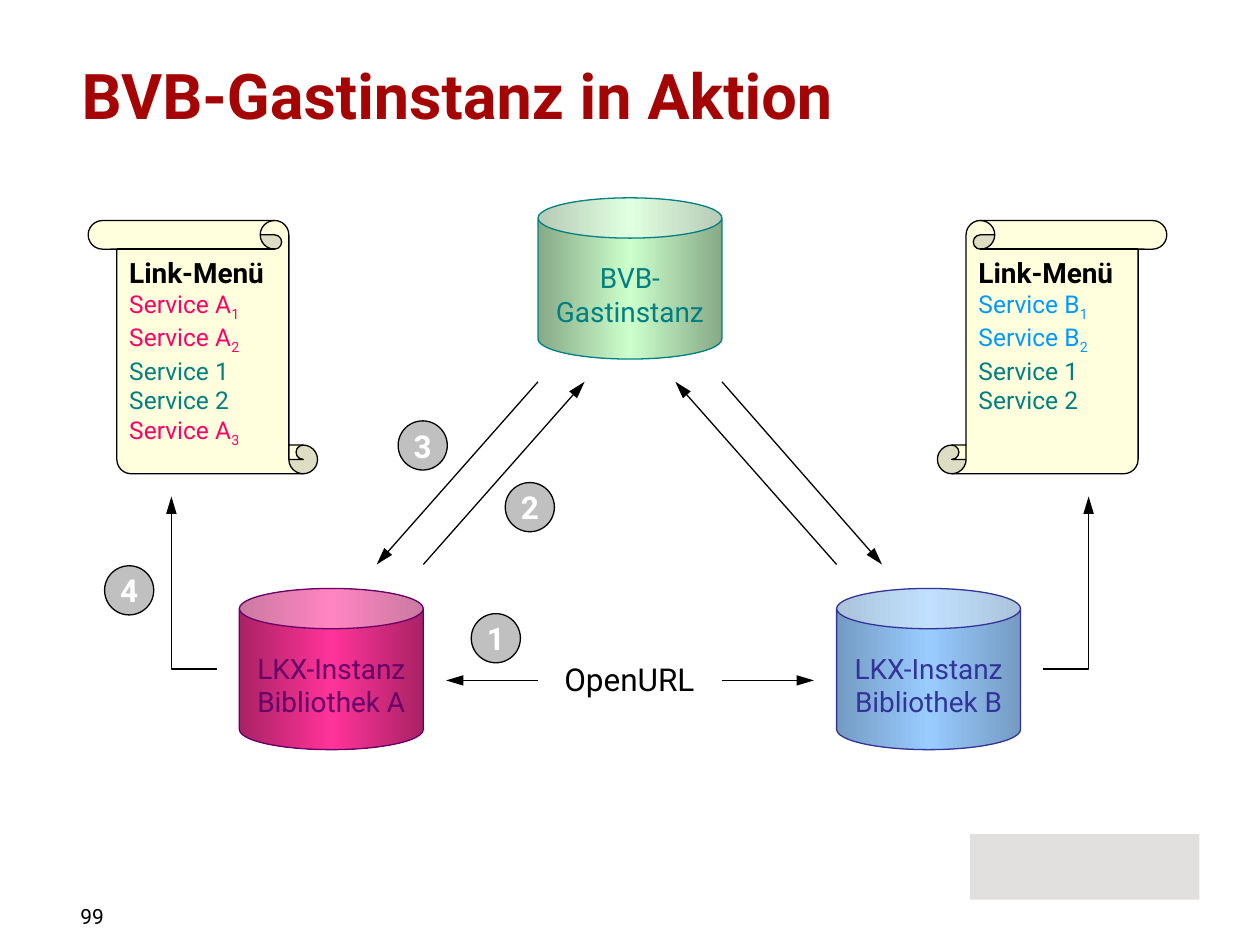
import copy

import pptx
import pptx.dml.color
import pptx.enum.shapes
import pptx.enum.text
import pptx.oxml.ns
import pptx.util
from pptx.util import Inches

SHAPE = pptx.enum.shapes.MSO_SHAPE
CONNECTOR = pptx.enum.shapes.MSO_CONNECTOR
ANCHOR = pptx.enum.text.MSO_ANCHOR
ALIGN = pptx.enum.text.PP_ALIGN
qn = pptx.oxml.ns.qn

FONT = "Roboto"
COLORS = {
    "title": "A40404", "black": "000000", "white": "FFFFFF",
    "block": "E1E0DE", "badge": "C0C0C0", "scroll": "FFFFCC",
    "shared": "008080", "guest_edge": "87A987", "guest_mid": "CCFFCC",
    "a_text": "660066", "a_edge": "A92265", "a_mid": "FF3399", "a_service": "FF0066",
    "b_text": "333399", "b_edge": "749BC2", "b_mid": "99CCFF", "b_service": "0099FF",
}


def rgb(name):
    return pptx.dml.color.RGBColor.from_string(COLORS[name])


def add_run(p, text, size=14, color="black", bold=False, baseline=0):
    r = p.add_run()
    r.text = text
    r.font.name = FONT
    r.font.size = pptx.util.Pt(size)
    r.font.bold = bold
    r.font.color.rgb = rgb(color)
    if baseline:
        r.font._element.set("baseline", str(baseline * 1000))


def add_text(slide, x, y, w, h, text, align=None, **fmt):
    sp = slide.shapes.add_textbox(Inches(x), Inches(y), Inches(w), Inches(h))
    tf = sp.text_frame
    tf.word_wrap = True
    p = tf.paragraphs[0]
    p.alignment = align
    add_run(p, text, **fmt)


def add_shape(slide, kind, x, y, w, h, fill, line=None):
    sp = slide.shapes.add_shape(kind, Inches(x), Inches(y), Inches(w), Inches(h))
    sp.shadow.inherit = False
    sp.fill.solid()
    sp.fill.fore_color.rgb = rgb(fill)
    if line:
        sp.line.color.rgb = rgb(line)
        sp.line.width = pptx.util.Pt(0.75)
    else:
        sp.line.fill.background()
    return sp


def add_cylinder(slide, x, y, text, edge, mid, color):
    sp = add_shape(slide, SHAPE.CAN, x, y, 1.46, 1.28, mid, color)
    sp.fill.gradient()
    sp.fill.gradient_angle = 0
    stops = sp._element.spPr.find(".//" + qn("a:gsLst"))
    stops.insert(1, copy.deepcopy(stops[0]))
    for stop, position, name in zip(sp.fill.gradient_stops, (0, 0.5, 1), (edge, mid, edge)):
        stop.position = position
        stop.color.rgb = rgb(name)
    tf = sp.text_frame
    tf.word_wrap = True
    tf.vertical_anchor = ANCHOR.TOP
    tf.margin_top = Inches(0.18)
    p = tf.paragraphs[0]
    p.alignment = ALIGN.CENTER
    add_run(p, text, size=16, color=color)


def add_scroll(slide, x, services, flip=False):
    sp = add_shape(slide, SHAPE.VERTICAL_SCROLL, x, 1.75, 1.82, 2.01, "scroll", "black")
    if flip:
        sp._element.spPr.xfrm.set("flipH", "1")
    fill_color = sp._element.spPr.find(qn("a:solidFill"))[0]
    fill_color.append(fill_color.makeelement(qn("a:alpha"), {"val": "65000"}))
    tf = sp.text_frame
    tf.word_wrap = True
    tf.vertical_anchor = ANCHOR.TOP
    p = tf.paragraphs[0]
    p.alignment = ALIGN.LEFT
    add_run(p, "Link-Menü", size=16, bold=True)
    for name, index, color in services:
        p = tf.add_paragraph()
        p.alignment = ALIGN.LEFT
        add_run(p, name, color=color)
        if index:
            add_run(p, index, color=color, baseline=-25)


def add_badge(slide, x, y, number):
    sp = add_shape(slide, SHAPE.OVAL, x, y, 0.39, 0.39, "badge", "black")
    tf = sp.text_frame
    tf.word_wrap = False
    tf.vertical_anchor = ANCHOR.MIDDLE
    p = tf.paragraphs[0]
    p.alignment = ALIGN.CENTER
    add_run(p, number, size=18, color="white", bold=True)


def add_arrow(slide, x1, y1, x2, y2, kind=CONNECTOR.STRAIGHT):
    cxn = slide.shapes.add_connector(kind, Inches(x1), Inches(y1), Inches(x2), Inches(y2))
    cxn.line.color.rgb = rgb("black")
    cxn.line.width = pptx.util.Pt(0.75)
    sp_pr = cxn._element.spPr
    ln = sp_pr.find(qn("a:ln"))
    ln.append(ln.makeelement(qn("a:tailEnd"), {"type": "triangle", "w": "med", "len": "lg"}))
    sp_pr.append(sp_pr.makeelement(qn("a:effectLst"), {}))
    return cxn


def add_elbow_up(slide, x_foot, x_tip):
    cxn = add_arrow(slide, x_tip, 3.94, x_foot, 5.31, CONNECTOR.ELBOW)
    sp_pr = cxn._element.spPr
    sp_pr.find(qn("a:xfrm")).set("rot", "10800000")
    sp_pr.find(qn("a:prstGeom")).set("prst", "bentConnector2")


def main():
    prs = pptx.Presentation()
    prs.slide_width, prs.slide_height = Inches(10), Inches(7.5)
    s = prs.slides.add_slide(prs.slide_layouts[6])

    add_shape(s, SHAPE.RECTANGLE, 7.7, 6.62, 1.82, 0.52, "block")
    add_text(s, 0.54, 7.12, 2.05, 0.38, "99", size=12)
    add_text(s, 0.55, 0.4, 8.89, 0.74, "BVB-Gastinstanz in Aktion",
             size=36, color="title", bold=True)

    add_cylinder(s, 4.27, 1.57, "BVB-Gastinstanz", "guest_edge", "guest_mid", "shared")
    add_cylinder(s, 1.9, 4.67, "LKX-Instanz Bibliothek A", "a_edge", "a_mid", "a_text")
    add_cylinder(s, 6.64, 4.67, "LKX-Instanz Bibliothek B", "b_edge", "b_mid", "b_text")

    shared = [("Service 1", "", "shared"), ("Service 2", "", "shared")]
    a1, a2, a3 = [("Service A", i, "a_service") for i in "123"]
    b1, b2 = [("Service B", i, "b_service") for i in "12"]
    add_scroll(s, 7.44, [b1, b2, *shared])
    add_scroll(s, 0.7, [a1, a2, *shared, a3], flip=True)

    for ends in [
        (5.73, 5.4, 6.46, 5.4), (4.27, 5.4, 3.54, 5.4),
        (5.73, 3.03, 7, 4.48), (6.64, 4.48, 5.36, 3.03),
        (4.27, 3.03, 2.99, 4.48), (3.36, 4.48, 4.64, 3.03),
    ]:
        add_arrow(s, *ends)
    add_elbow_up(s, 1.72, 1.36)
    add_elbow_up(s, 8.28, 8.64)

    for x, y, number in [(3.74, 4.87, "1"), (4.01, 3.83, "2"),
                         (3.16, 3.34, "3"), (0.83, 4.49, "4")]:
        add_badge(s, x, y, number)
    add_text(s, 4.29, 5.19, 1.41, 0.4, "OpenURL", align=ALIGN.CENTER, size=18)

    prs.save("out.pptx")


if __name__ == "__main__":
    main()
